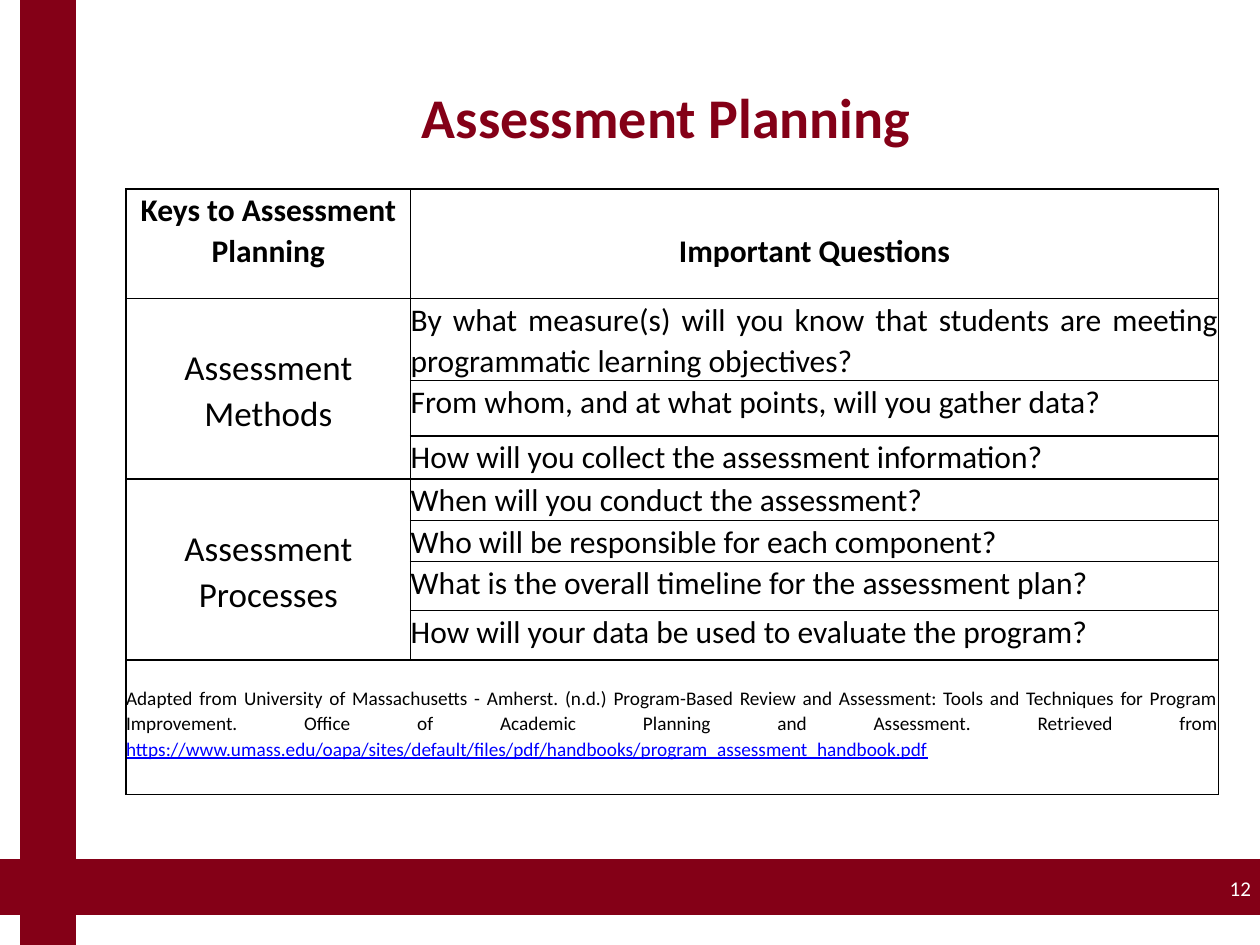
"""Build the Assessment Planning slide with its table of key questions."""
from dataclasses import dataclass

from lxml import etree
from pptx import Presentation
from pptx import util as u
from pptx.dml.color import RGBColor
from pptx.enum import shapes, text
from pptx.oxml import ns

RED = RGBColor(0x84, 0x00, 0x17)
BLACK = RGBColor(0, 0, 0)
WHITE = RGBColor(255, 255, 255)
BLUE = RGBColor(0, 0, 255)
FONT = "Calibri"
AL = text.PP_ALIGN

COLS = (5.74, 16.28)
ROWS = (2.21, 1.65, 1.12, 0.87, 0.83, 0.83, 0.99, 0.99, 2.72)
CITE = (
    "Adapted from University of Massachusetts - Amherst. (n.d.) Program-Based "
    "Review and Assessment: Tools and Techniques for Program Improvement. "
    "Office of Academic Planning and Assessment. Retrieved from "
)
LINK = "https://www.umass.edu/oapa/sites/default/files/pdf/handbooks/program_assessment_handbook.pdf"


@dataclass(frozen=True)
class Bar:
    left: float
    top: float
    width: float
    height: float


@dataclass(frozen=True)
class Entry:
    row: int
    col: int
    lines: tuple
    size: int = 18
    bold: bool = False
    align: AL = AL.JUSTIFY
    pad: float = 0
    down: int = 1
    across: int = 1


BARS = (Bar(0, 17.35, 25.4, 1.07), Bar(0.43, 0, 1.07, 19.05))
ASKS = (
    "By what measure(s) will you know that students are meeting programmatic learning objectives?",
    "From whom, and at what points, will you gather data?",
    "How will you collect the assessment information?",
    "When will you conduct the assessment?",
    "Who will be responsible for each component?",
    "What is the overall timeline for the assessment plan?",
    "How will your data be used to evaluate the program?",
)
ENTRIES = (
    Entry(0, 0, ("Keys to Assessment Planning",), bold=True, align=AL.CENTER),
    Entry(0, 1, ("Important Questions",), bold=True, align=AL.CENTER, pad=0.83),
    Entry(1, 0, ("Assessment", "Methods"), 20, align=AL.CENTER, pad=0.92, down=3),
    Entry(4, 0, ("Assessment", "Processes"), 20, align=AL.CENTER, pad=0.92, down=4),
    *(Entry(row, 1, (ask,)) for row, ask in enumerate(ASKS, 1)),
    Entry(8, 0, (CITE,), 11, pad=0.51, across=2),
)


def write(para, words: str, *, size: int, color=BLACK, bold=False, line=False,
          align=AL.LEFT, space: float = 1.0) -> None:
    """Append a formatted run to a paragraph."""
    para.alignment = align
    para.line_spacing = space
    run = para.add_run()
    run.text = words
    font = run.font
    font.name, font.size, font.bold = FONT, u.Pt(size), bold
    font.underline = line
    font.color.rgb = color


def draw_bar(slide, bar: Bar) -> None:
    """Draw one solid band."""
    box = [u.Cm(n) for n in (bar.left, bar.top, bar.width, bar.height)]
    shape = slide.shapes.add_shape(shapes.MSO_SHAPE.RECTANGLE, *box)
    shape.shadow.inherit = False
    shape.fill.solid()
    shape.fill.fore_color.rgb = RED
    shape.line.color.rgb = RED
    shape.line.width = u.Pt(2)


def add_label(slide, words: str, left: float, top: float, width: float,
              height: float, *, wrap: bool, **style) -> None:
    """Add a text box centred on its middle line."""
    box = slide.shapes.add_textbox(*(u.Cm(n) for n in (left, top, width, height)))
    frame = box.text_frame
    frame.word_wrap = wrap
    frame.vertical_anchor = text.MSO_ANCHOR.MIDDLE
    frame.margin_left = frame.margin_right = u.Cm(0.13)
    frame.margin_top = frame.margin_bottom = u.Cm(0.13)
    write(frame.paragraphs[0], words, **style)


def edge(cell) -> None:
    """Give a cell no fill, no margins and thin black borders."""
    cell.fill.background()
    cell.margin_left = cell.margin_right = 0
    cell.margin_top = cell.margin_bottom = 0
    props = cell._tc.get_or_add_tcPr()
    for spot, side in enumerate(("lnL", "lnR", "lnT", "lnB")):
        line = etree.Element(ns.qn(f"a:{side}"), w=str(u.Pt(1)))
        fill = etree.SubElement(line, ns.qn("a:solidFill"))
        etree.SubElement(fill, ns.qn("a:srgbClr"), val=str(BLACK))
        props.insert(spot, line)


def fill_cell(table, entry: Entry) -> None:
    """Merge and fill the cells of one entry."""
    cell = table.cell(entry.row, entry.col)
    if entry.down * entry.across > 1:
        cell.merge(table.cell(entry.row + entry.down - 1, entry.col + entry.across - 1))
    cell.margin_top = u.Cm(entry.pad)
    frame = cell.text_frame
    for num, words in enumerate(entry.lines):
        para = frame.add_paragraph() if num else frame.paragraphs[0]
        write(para, words, size=entry.size, bold=entry.bold,
              align=entry.align, space=1.07)


def add_grid(slide) -> None:
    """Add the table of keys and questions."""
    frame = slide.shapes.add_table(len(ROWS), len(COLS), u.Cm(2.54), u.Cm(3.81),
                                   u.Cm(sum(COLS)), u.Cm(sum(ROWS)))
    table = frame.table
    table.first_row = table.horz_banding = False
    for col, width in zip(table.columns, COLS):
        col.width = u.Cm(width)
    for row, height in zip(table.rows, ROWS):
        row.height = u.Cm(height)
        for cell in row.cells:
            edge(cell)
            cell.text_frame.paragraphs[0].font.size = u.Pt(11)
    for entry in ENTRIES:
        fill_cell(table, entry)
    write(table.cell(8, 0).text_frame.paragraphs[0], LINK, size=11, color=BLUE,
          line=True, align=AL.JUSTIFY, space=1.07)


def main() -> None:
    """Build and save the slide."""
    deck = Presentation()
    deck.slide_width, deck.slide_height = u.Cm(25.4), u.Cm(19.05)
    slide = deck.slides.add_slide(deck.slide_layouts[6])
    for bar in BARS:
        draw_bar(slide, bar)
    add_label(slide, "Assessment Planning", 2.74, 0.76, 21.39, 3.18, wrap=True,
              size=32, color=RED, bold=True, align=AL.CENTER)
    add_label(slide, "12", 24.64, 17.55, 0.71, 0.69, wrap=False,
              size=12, color=WHITE, align=AL.RIGHT)
    add_grid(slide)
    deck.save("out.pptx")


if __name__ == "__main__":
    main()
